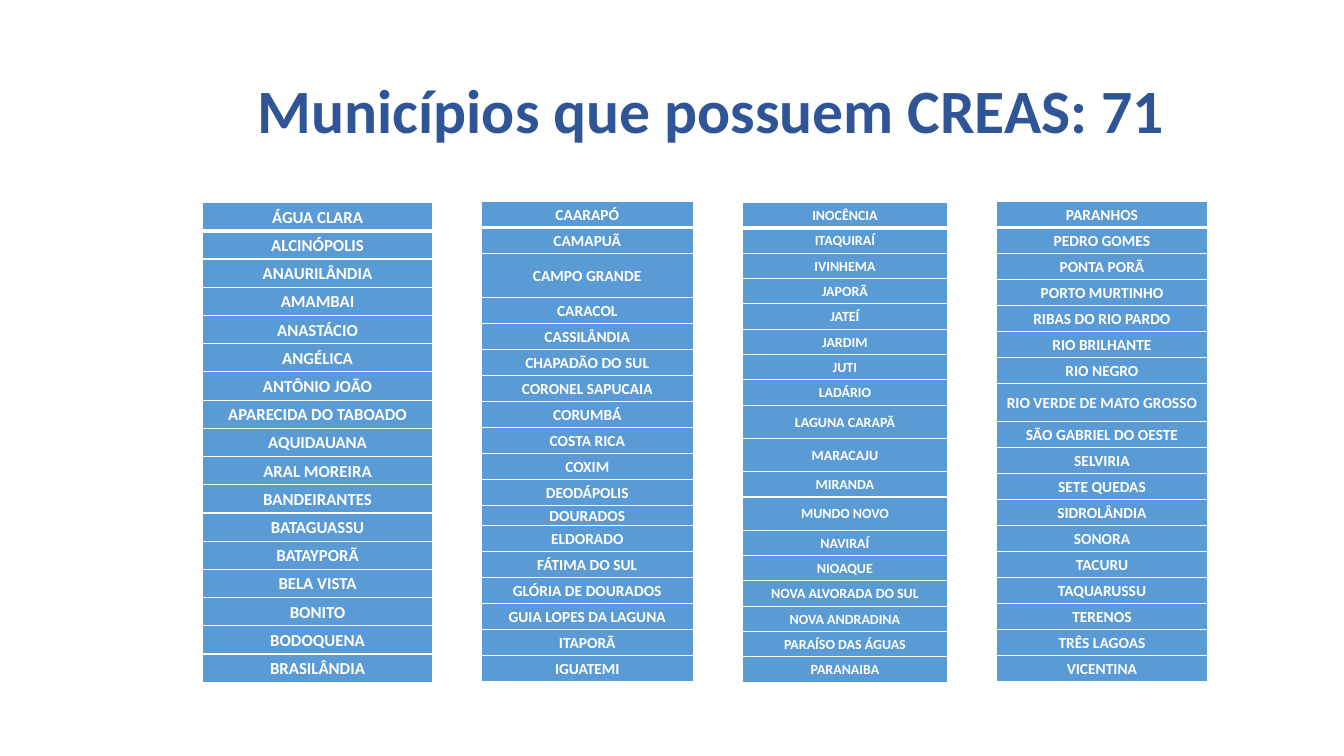
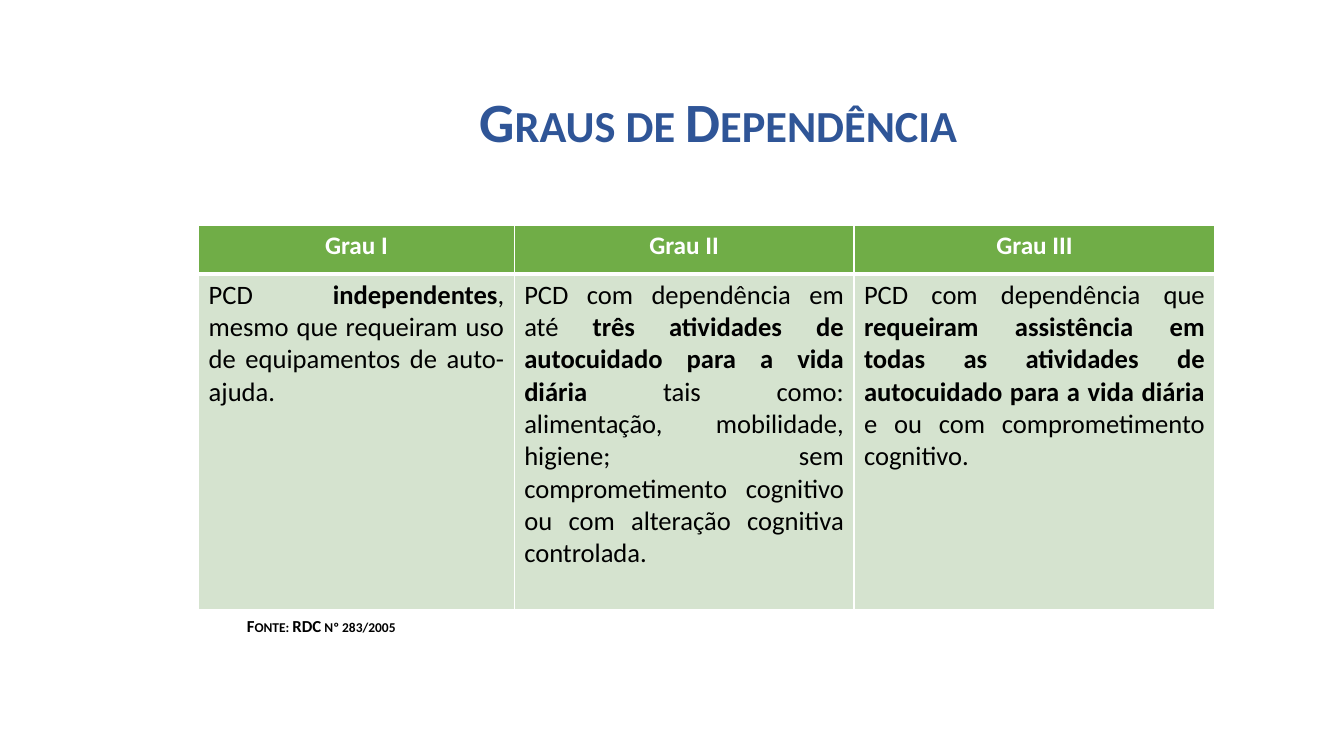
from dataclasses import dataclass

from lxml import etree
from pptx import Presentation
from pptx.dml.color import RGBColor
from pptx.enum.text import MSO_ANCHOR, MSO_AUTO_SIZE, PP_ALIGN
from pptx.oxml.ns import qn
from pptx.util import Inches, Pt

CENTER, JUSTIFY, LEFT = PP_ALIGN.CENTER, PP_ALIGN.JUSTIFY, PP_ALIGN.LEFT
TOP, MIDDLE = MSO_ANCHOR.TOP, MSO_ANCHOR.MIDDLE
NO_AUTOFIT = MSO_AUTO_SIZE.NONE


@dataclass(frozen=True)
class Theme:
    font: str = "Calibri"
    title: str = "2F5597"
    blue: str = "5B9BD5"
    green: str = "70AD47"
    pale_green: str = "D5E3CF"
    white: str = "FFFFFF"
    black: str = "000000"
    title_size: float = 44
    small_caps_title_size: float = 39.6
    header_size: float = 18
    body_size: float = 19
    source_size: float = 12
    thin_border: float = 1
    thick_border: float = 3


theme = Theme()


def write(paragraph, runs, size, color, alignment, line_spacing=None, small_caps=False):
    paragraph.alignment = alignment
    paragraph.line_spacing = line_spacing
    for text, bold in runs:
        run = paragraph.add_run()
        run.text = text
        values = {"name": theme.font, "size": Pt(size), "bold": bold}
        for name, value in values.items():
            setattr(run.font, name, value)
        run.font.color.rgb = RGBColor.from_string(color)
        if small_caps:
            run._r.get_or_add_rPr().set("cap", "small")


def style_cell(cell, row_index, fill, cell_format):
    for name, value in cell_format.items():
        setattr(cell, name, value)
    widths = {"lnL": theme.thin_border, "lnR": theme.thin_border,
              "lnT": theme.thick_border if row_index == 1 else theme.thin_border,
              "lnB": theme.thick_border if row_index == 0 else theme.thin_border}
    properties = cell._tc.get_or_add_tcPr()
    for side, width in widths.items():
        line = etree.SubElement(properties, qn("a:" + side), w=str(Pt(width)))
        solid = etree.SubElement(line, qn("a:solidFill"))
        etree.SubElement(solid, qn("a:srgbClr"), val=theme.white)
    cell.fill.solid()
    cell.fill.fore_color.rgb = RGBColor.from_string(fill)


presentation = Presentation()
presentation.slide_width = Inches(13.33)
presentation.slide_height = Inches(7.5)

titles = [
    {"text": "Municípios que possuem CREAS: 71", "size": theme.title_size,
     "box": (1.31, 0.4, 11.5, 1.45), "small_caps": False},
    {"text": "Graus de Dependência", "size": theme.small_caps_title_size,
     "box": (1.83, 0.93, 10.59, 0.62), "small_caps": True},
]
slides = []
for title in titles:
    slide = presentation.slides.add_slide(presentation.slide_layouts[5])
    shape = slide.shapes.title
    for name, value in zip(("left", "top", "width", "height"), title["box"]):
        setattr(shape, name, Inches(value))
    frame_format = {"vertical_anchor": MIDDLE, "word_wrap": True, "auto_size": NO_AUTOFIT}
    for name, value in frame_format.items():
        setattr(shape.text_frame, name, value)
    write(shape.text_frame.paragraphs[0], [(title["text"], True)], title["size"],
          theme.title, CENTER, 0.9, title["small_caps"])
    slides.append(slide)
municipalities_slide, degrees_slide = slides

municipality_lists = [
    {"left": 2.01, "top": 2.01, "width": 2.28, "size": 12, "margin": 0.05, "heights": {},
     "names": ["ÁGUA CLARA", "ALCINÓPOLIS", "ANAURILÂNDIA", "AMAMBAI", "ANASTÁCIO",
               "ANGÉLICA", "ANTÔNIO JOÃO", "APARECIDA DO TABOADO", "AQUIDAUANA",
               "ARAL MOREIRA", "BANDEIRANTES", "BATAGUASSU", "BATAYPORÃ", "BELA VISTA",
               "BONITO", "BODOQUENA", "BRASILÂNDIA"]},
    {"left": 4.77, "top": 2, "width": 2.11, "size": 11, "margin": 0.04,
     "heights": {"CAMPO GRANDE": 0.44, "DOURADOS": 0.2},
     "names": ["CAARAPÓ", "CAMAPUÃ", "CAMPO GRANDE", "CARACOL", "CASSILÂNDIA",
               "CHAPADÃO DO SUL", "CORONEL SAPUCAIA", "CORUMBÁ", "COSTA RICA", "COXIM",
               "DEODÁPOLIS", "DOURADOS", "ELDORADO", "FÁTIMA DO SUL",
               "GLÓRIA DE DOURADOS", "GUIA LOPES DA LAGUNA", "ITAPORÃ", "IGUATEMI"]},
    {"left": 7.36, "top": 2.01, "width": 2.04, "size": 10, "margin": 0.04,
     "heights": {"LAGUNA CARAPÃ": 0.33, "MARACAJU": 0.33, "MUNDO NOVO": 0.33},
     "names": ["INOCÊNCIA", "ITAQUIRAÍ", "IVINHEMA", "JAPORÃ", "JATEÍ", "JARDIM", "JUTI",
               "LADÁRIO", "LAGUNA CARAPÃ", "MARACAJU", "MIRANDA", "MUNDO NOVO", "NAVIRAÍ",
               "NIOAQUE", "NOVA ALVORADA DO SUL", "NOVA ANDRADINA", "PARAÍSO DAS ÁGUAS",
               "PARANAIBA"]},
    {"left": 9.88, "top": 2, "width": 2.1, "size": 11, "margin": 0.04,
     "heights": {"RIO VERDE DE MATO GROSSO": 0.38},
     "names": ["PARANHOS", "PEDRO GOMES", "PONTA PORÃ", "PORTO MURTINHO",
               "RIBAS DO RIO PARDO", "RIO BRILHANTE", "RIO NEGRO",
               "RIO VERDE DE MATO GROSSO", "SÃO GABRIEL DO OESTE", "SELVIRIA",
               "SETE QUEDAS", "SIDROLÂNDIA", "SONORA", "TACURU", "TAQUARUSSU", "TERENOS",
               "TRÊS LAGOAS", "VICENTINA"]},
]
list_height = 4.76
for municipality_list in municipality_lists:
    names, heights = municipality_list["names"], municipality_list["heights"]
    regular_height = (list_height - sum(heights.values())) / (len(names) - len(heights))
    table = municipalities_slide.shapes.add_table(
        len(names), 1, Inches(municipality_list["left"]), Inches(municipality_list["top"]),
        Inches(municipality_list["width"]), Inches(list_height)).table
    table.first_row = table.horz_banding = False
    margin = Inches(municipality_list["margin"])
    cell_format = {"vertical_anchor": MIDDLE, "margin_left": margin, "margin_right": margin,
                   "margin_top": 0, "margin_bottom": 0}
    for row_index, name in enumerate(names):
        table.rows[row_index].height = Inches(heights.get(name, regular_height))
        cell = table.cell(row_index, 0)
        style_cell(cell, row_index, theme.blue, cell_format)
        write(cell.text_frame.paragraphs[0], [(name, True)], municipality_list["size"],
              theme.white, CENTER, 1.07)

degrees = [
    {"name": "Grau I", "width": 3.13, "runs": [
        ("PCD ", False), ("independentes", True),
        (", mesmo que requeiram uso de equipamentos de auto-ajuda.", False)]},
    {"name": "Grau II", "width": 3.37, "runs": [
        ("PCD com dependência em até ", False),
        ("três atividades de autocuidado para a vida diária ", True),
        ("tais como: alimentação, mobilidade, higiene; sem comprometimento cognitivo "
         "ou com alteração cognitiva controlada.", False)]},
    {"name": "Grau III", "width": 3.58, "runs": [
        ("PCD com dependência que ", False),
        ("requeiram assistência em todas as atividades de autocuidado para a vida diária ",
         True),
        ("e ou com comprometimento cognitivo.", False)]},
]
row_heights = (0.48, 3.33)
table = degrees_slide.shapes.add_table(
    len(row_heights), len(degrees), Inches(1.97), Inches(2.24),
    Inches(sum(degree["width"] for degree in degrees)), Inches(sum(row_heights))).table
table.first_row = table.horz_banding = False
for row, height in zip(table.rows, row_heights):
    row.height = Inches(height)
for column_index, degree in enumerate(degrees):
    table.columns[column_index].width = Inches(degree["width"])
    rows = [
        (theme.green, [(degree["name"], True)], theme.header_size, theme.white, CENTER),
        (theme.pale_green, degree["runs"], theme.body_size, theme.black, JUSTIFY),
    ]
    for row_index, (fill, runs, size, color, alignment) in enumerate(rows):
        cell = table.cell(row_index, column_index)
        style_cell(cell, row_index, fill, {"vertical_anchor": TOP})
        write(cell.text_frame.paragraphs[0], runs, size, color, alignment)

source = degrees_slide.shapes.add_textbox(Inches(2.35), Inches(6.06), Inches(6.67), Inches(0.3))
source.text_frame.word_wrap = True
write(source.text_frame.paragraphs[0], [("Fonte: RDC nº 283/2005", True)],
      theme.source_size, theme.black, LEFT, small_caps=True)

presentation.save("out.pptx")
